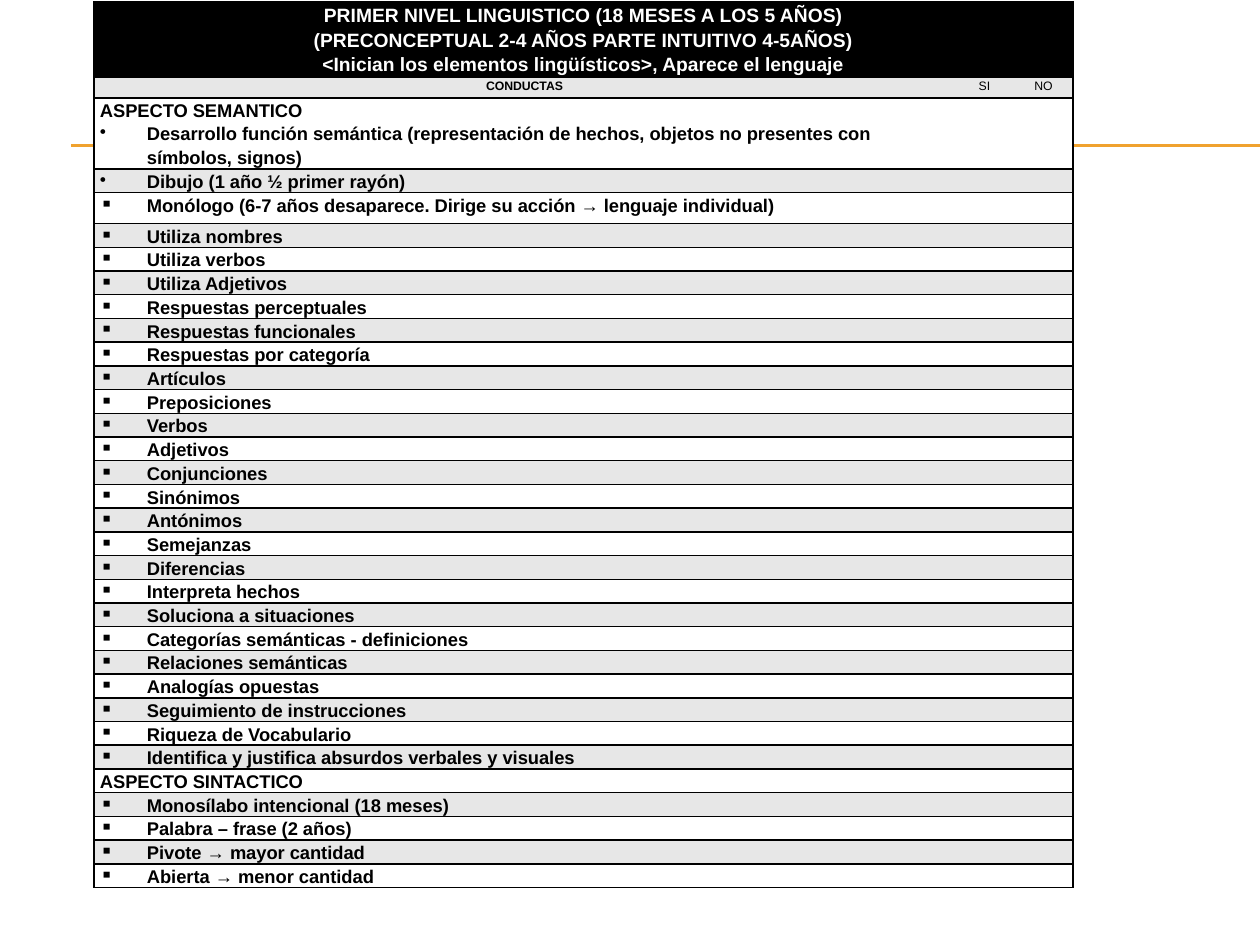
"""Build a checklist slide of early language behaviours."""
from lxml.etree import SubElement as Sub
from pptx import Presentation
from pptx.dml.color import RGBColor as RGB
from pptx.enum.shapes import MSO_CONNECTOR as Link
from pptx.enum.text import PP_ALIGN as Align
from pptx.oxml.ns import qn
from pptx.util import Pt

TITLE = [
    "PRIMER NIVEL LINGUISTICO (18 MESES A LOS 5 AÑOS)",
    "(PRECONCEPTUAL 2-4 AÑOS PARTE INTUITIVO 4-5AÑOS)",
    "<Inician los elementos lingüísticos>, Aparece el lenguaje",
]
HEADS = ["CONDUCTAS", "SI", "NO"]
FIRST = [
    ("", "ASPECTO SEMANTICO"),
    ("•", "Desarrollo función semántica (representación de hechos, "
          "objetos no presentes con símbolos, signos)"),
]
DRAW = ("•", "Dibujo (1 año ½ primer rayón)")
SEMANTIC = [
    "Monólogo (6-7 años desaparece. Dirige su acción → lenguaje individual)",
    "Utiliza nombres", "Utiliza verbos", "Utiliza Adjetivos",
    "Respuestas perceptuales", "Respuestas funcionales",
    "Respuestas por categoría", "Artículos", "Preposiciones", "Verbos",
    "Adjetivos", "Conjunciones", "Sinónimos", "Antónimos", "Semejanzas",
    "Diferencias", "Interpreta hechos", "Soluciona a situaciones",
    "Categorías semánticas - definiciones", "Relaciones semánticas",
    "Analogías opuestas", "Seguimiento de instrucciones",
    "Riqueza de Vocabulario",
    "Identifica y justifica absurdos verbales y visuales",
]
SYNTAX = [
    "Monosílabo intencional (18 meses)", "Palabra – frase (2 años)",
    "Pivote → mayor cantidad", "Abierta → menor cantidad",
]
ITEMS = [FIRST, [DRAW], *[[("▪", text)] for text in SEMANTIC],
         [("", "ASPECTO SINTACTICO")], *[[("▪", text)] for text in SYNTAX]]

COLORS = {"ink": "000000", "paper": "FFFFFF", "band": "E7E7E7", "rule": "F0A22E"}
LEFT, TOP, BOTTOM = 94, 2, 889
COLS = [861, 59, 59]
TALL = {0: 75, 1: 21, 2: 71, 4: 31}
RULES = [145, 146]
INDENT = 47
MARGINS = {"margin_left": 6, "margin_right": 6, "margin_top": 0, "margin_bottom": 0}
HEAD = {"size": Pt(11), "bold": True}
LABEL = {"size": Pt(7), "bold": True}
MARK = {"size": Pt(7), "bold": False}
BODY = {"size": Pt(10.5), "bold": True}


def px(n):
    return round(n * 914400 / 126)


def color(name):
    return RGB.from_string(COLORS[name])


def style(cell, fill, sides):
    for name, n in MARGINS.items():
        setattr(cell, name, px(n))
    props = cell._tc.get_or_add_tcPr()
    for side in "LRTB":
        line = Sub(props, qn(f"a:ln{side}"), w=str(Pt(1)))
        if side in sides:
            solid = Sub(line, qn("a:solidFill"))
            Sub(solid, qn("a:srgbClr"), val=COLORS["ink"])
        else:
            Sub(line, qn("a:noFill"))
    cell.fill.solid()
    cell.fill.fore_color.rgb = color(fill)


def write(cell, lines, font, ink="ink", align=Align.LEFT):
    frame = cell.text_frame
    for i, (mark, text) in enumerate(lines):
        para = frame.add_paragraph() if i else frame.paragraphs[0]
        para.alignment, para.line_spacing = align, 1.15
        if mark:
            props = para._p.get_or_add_pPr()
            props.set("marL", str(px(INDENT)))
            props.set("indent", str(-px(INDENT)))
            Sub(props, qn("a:buChar"), char=mark)
        run = para.add_run()
        run.text = text
        for name, value in {"name": "Arial", **font}.items():
            setattr(run.font, name, value)
        run.font.color.rgb = color(ink)


def main():
    deck = Presentation()
    deck.slide_width, deck.slide_height = px(1260), px(945)
    shapes = deck.slides.add_slide(deck.slide_layouts[6]).shapes

    for y in RULES:
        rule = shapes.add_connector(Link.STRAIGHT, px(71), px(y), px(1260), px(y))
        rule.line.color.rgb, rule.line.width = color("rule"), Pt(0.75)
        Sub(rule._element.spPr, qn("a:effectLst"))

    count = len(ITEMS) + 2
    step = (BOTTOM - TOP - sum(TALL.values())) / (count - len(TALL))
    table = shapes.add_table(count, len(COLS), px(LEFT), px(TOP),
                             px(sum(COLS)), px(BOTTOM - TOP)).table
    table.first_row = table.horz_banding = False
    for col, wide in zip(table.columns, COLS):
        col.width = px(wide)
    for r, row in enumerate(table.rows):
        row.height = px(TALL.get(r, step))
        fill = "band" if r % 2 else "paper"
        for cell, edge in zip(row.cells, ["L", "", "R"]):
            style(cell, fill if r else "ink", "TB" + edge if r else "LRTB")

    title = table.cell(0, 0)
    title.merge(table.cell(0, 2))
    write(title, [("", text) for text in TITLE], HEAD, "paper", Align.CENTER)
    for c, text in enumerate(HEADS):
        write(table.cell(1, c), [("", text)], MARK if c else LABEL, align=Align.CENTER)
    for r, lines in enumerate(ITEMS, 2):
        write(table.cell(r, 0), lines, BODY)
        for c in (1, 2):
            para = table.cell(r, c).text_frame.paragraphs[0]
            Sub(para._p, qn("a:endParaRPr"), sz="700")

    deck.save("out.pptx")


if __name__ == "__main__":
    main()
